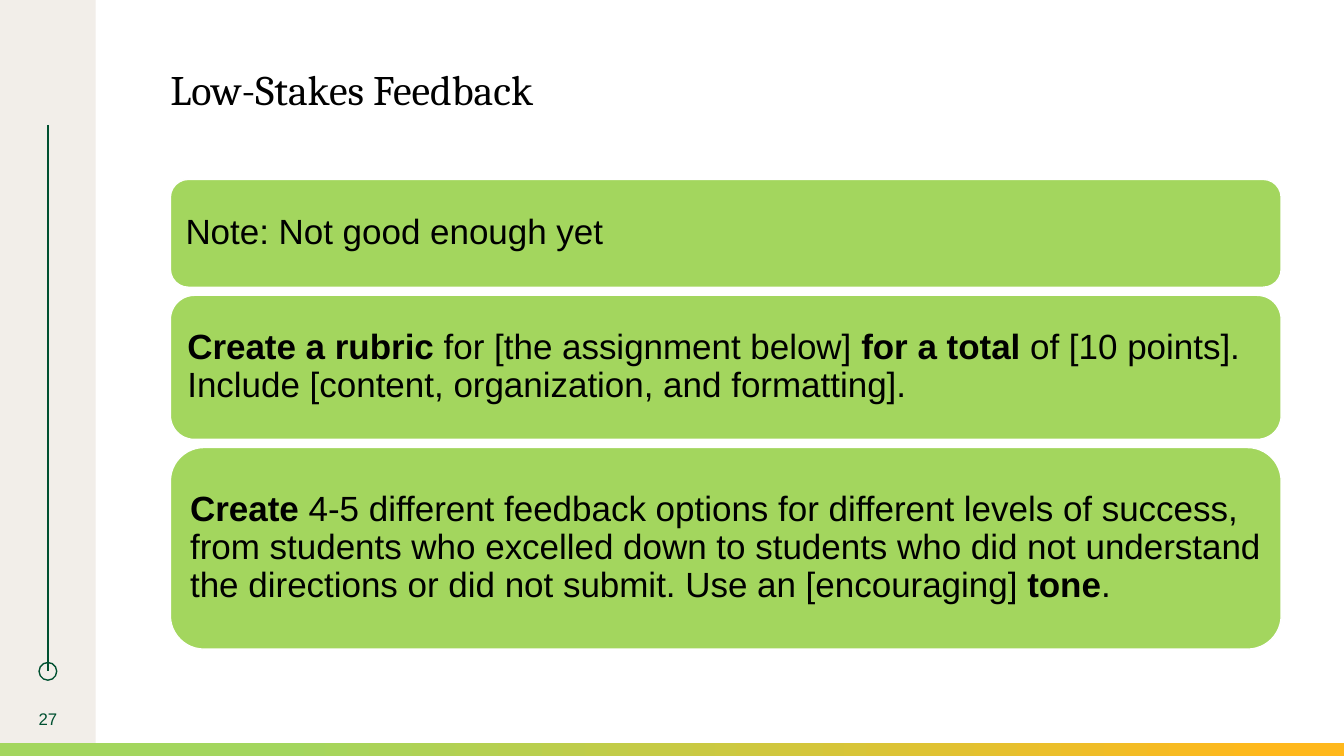
from dataclasses import dataclass

from lxml import etree
from pptx import Presentation
from pptx import util as u
from pptx.dml.color import RGBColor
from pptx.enum import shapes, text
from pptx.oxml.ns import qn

Pt = u.Pt


@dataclass(frozen=True)
class Theme:
    sand: RGBColor = RGBColor.from_string("F2EEE9")
    forest: RGBColor = RGBColor.from_string("005030")
    lime: RGBColor = RGBColor.from_string("A3D65E")
    amber: RGBColor = RGBColor.from_string("FFB81C")
    black: RGBColor = RGBColor.from_string("000000")
    white: RGBColor = RGBColor.from_string("FFFFFF")
    heading_font: str = "Cambria"
    body_font: str = "Arial"
    title_size: int = 30
    card_size: int = 25
    number_size: int = 12


THEME = Theme()
SLIDE_WIDTH, SLIDE_HEIGHT = 960, 540
SIDEBAR_WIDTH = 68.4
CARD_GAP = 5.76

# Each card: height, then its runs as (wording, bold)
CARDS = [
    (77.04, [("Note: Not good enough yet", False)]),
    (102.96, [
        ("Create a rubric ", True),
        ("for [the assignment below] ", False),
        ("for a total ", True),
        ("of [10 points]. Include [content, organization, and formatting].", False),
    ]),
    (144, [
        ("Create", True),
        (" 4-5 different feedback options for different levels of success, "
         "from students who excelled down to students who did not understand "
         "the directions or did not submit. Use an [encouraging] ", False),
        ("tone", True),
        (".", False),
    ]),
]


def set_format(target, values):
    for name, value in values.items():
        setattr(target, name, value)


def add_shape(slide, kind, box, fill=None, line=None):
    shape = slide.shapes.add_shape(kind, *map(Pt, box))
    shape.shadow.inherit = False
    if fill is None:
        shape.fill.background()
    else:
        shape.fill.solid()
        shape.fill.fore_color.rgb = fill
    if line is None:
        shape.line.fill.background()
    else:
        shape.line.color.rgb = line
        shape.line.width = Pt(1)
    return shape


def write_text(shape, runs, font, size, color, inset=0, wrap=True, spacing=1.0,
               anchor=text.MSO_ANCHOR.MIDDLE, align=text.PP_ALIGN.LEFT):
    frame = shape.text_frame
    sides = ("left", "top", "right", "bottom")
    set_format(frame, {f"margin_{side}": Pt(inset) for side in sides})
    set_format(frame, {"word_wrap": wrap, "vertical_anchor": anchor})
    paragraph = frame.paragraphs[0]
    set_format(paragraph, {"alignment": align, "line_spacing": spacing})
    for wording, bold in runs:
        run = paragraph.add_run()
        run.text = wording
        set_format(run.font, {"name": font, "size": Pt(size), "bold": bold})
        run.font.color.rgb = color


def draw_sidebar(slide, box, number):
    """Sand panel with a line ending in a ring above the slide number."""
    left, top, width, height = box
    center = left + width / 2
    line_top, line_bottom, ring = top + 89.28, top + 479.52, 12.6
    add_shape(slide, shapes.MSO_SHAPE.RECTANGLE, box, fill=THEME.sand)
    line = slide.shapes.add_connector(
        shapes.MSO_CONNECTOR.STRAIGHT,
        Pt(center), Pt(line_top), Pt(center), Pt(line_bottom))
    line.line.color.rgb = THEME.forest
    line.line.width = Pt(1)
    etree.SubElement(line._element.spPr, qn("a:effectLst"))
    add_shape(slide, shapes.MSO_SHAPE.OVAL,
              (center - ring / 2, line_bottom - ring / 2, ring, ring),
              line=THEME.forest)
    number_box = slide.shapes.add_textbox(
        Pt(left), Pt(top + 499), Pt(width), Pt(28.8))
    write_text(number_box, [(number, False)], THEME.body_font, THEME.number_size,
               THEME.forest, align=text.PP_ALIGN.CENTER)


def draw_gradient_bar(slide, box):
    bar = add_shape(slide, shapes.MSO_SHAPE.RECTANGLE, box)
    bar.fill.gradient()
    bar.fill.gradient_angle = 0
    colors = [(0.21, THEME.lime), (0.95, THEME.amber)]
    for stop, (position, color) in zip(bar.fill.gradient_stops, colors):
        stop.position = position
        stop.color.rgb = color


def draw_title(slide, box, wording):
    title = slide.shapes.add_textbox(*map(Pt, box))
    write_text(title, [(wording, False)], THEME.heading_font, THEME.title_size,
               THEME.black, wrap=False, spacing=0.9, anchor=text.MSO_ANCHOR.TOP)
    title.text_frame.auto_size = text.MSO_AUTO_SIZE.SHAPE_TO_FIT_TEXT


def draw_cards(slide, left, top, width, cards):
    for height, runs in cards:
        card = add_shape(slide, shapes.MSO_SHAPE.ROUNDED_RECTANGLE,
                         (left, top, width, height), THEME.lime, THEME.white)
        write_text(card, runs, THEME.body_font, THEME.card_size, THEME.black,
                   inset=7.2, spacing=0.9)
        top += height + CARD_GAP


def main():
    presentation = Presentation()
    presentation.slide_width = Pt(SLIDE_WIDTH)
    presentation.slide_height = Pt(SLIDE_HEIGHT)
    slide = presentation.slides.add_slide(presentation.slide_layouts[6])
    draw_sidebar(slide, (0, 0, SIDEBAR_WIDTH, SLIDE_HEIGHT), "27")
    draw_gradient_bar(slide, (0, 530.5, SLIDE_WIDTH, 9.5))
    draw_title(slide, (121.68, 49.68, 296.64, 32.4), "Low-Stakes Feedback")
    draw_cards(slide, 121.68, 128.16, 793.44, CARDS)
    presentation.save("out.pptx")


if __name__ == "__main__":
    main()
